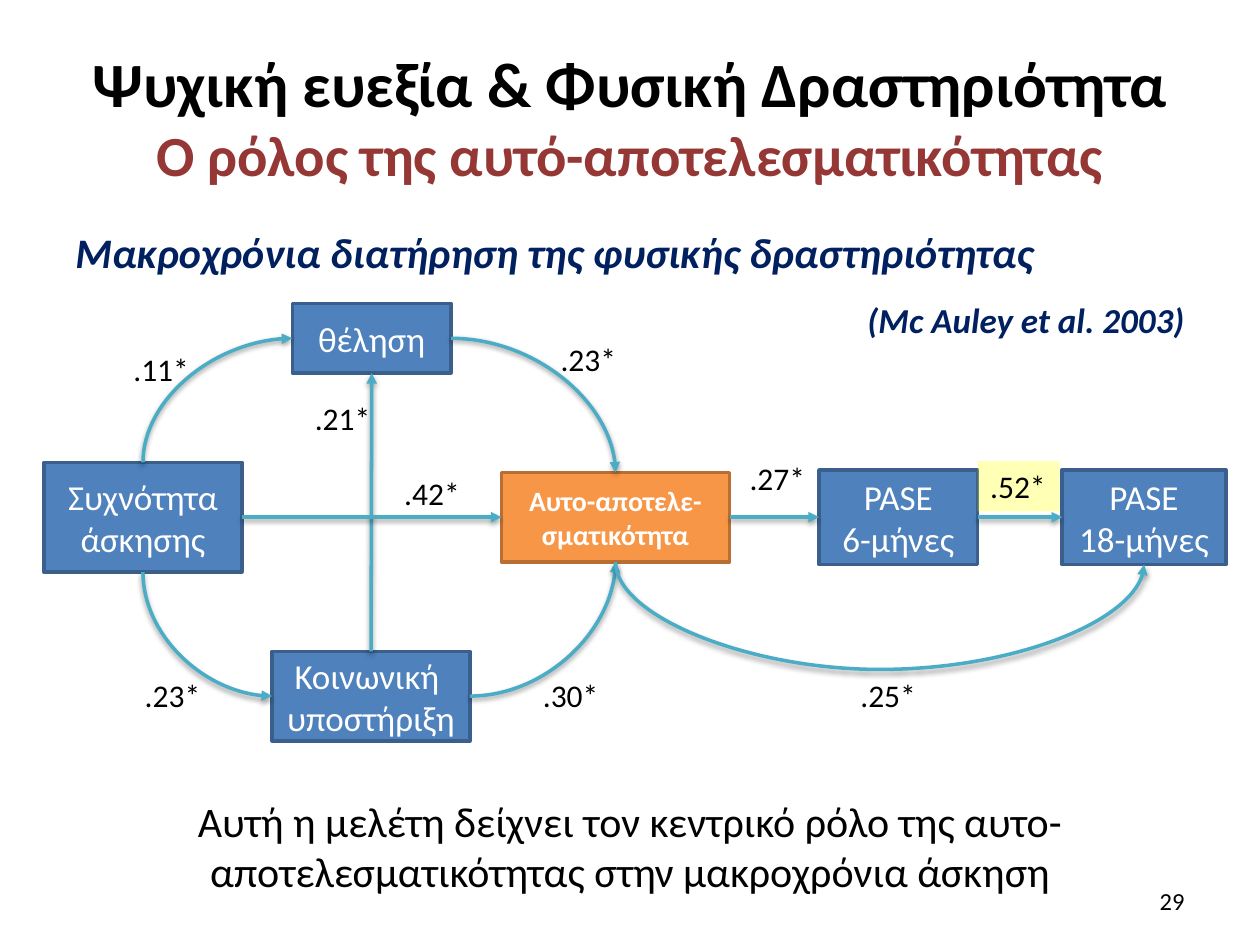
from dataclasses import dataclass

from lxml import etree
from pptx import Presentation
from pptx.dml.color import RGBColor
from pptx.enum.shapes import MSO_CONNECTOR, MSO_SHAPE
from pptx.enum.text import MSO_ANCHOR, MSO_AUTO_SIZE, PP_ALIGN
from pptx.oxml.ns import qn
from pptx.shapes.autoshape import Shape
from pptx.shapes.connector import Connector
from pptx.slide import Slide
from pptx.text.text import TextFrame
from pptx.util import Inches, Pt

RECTANGLE = MSO_SHAPE.RECTANGLE
STRAIGHT, CURVE = MSO_CONNECTOR.STRAIGHT, MSO_CONNECTOR.CURVE
LEFT, CENTER, RIGHT = PP_ALIGN.LEFT, PP_ALIGN.CENTER, PP_ALIGN.RIGHT
MIDDLE = MSO_ANCHOR.MIDDLE
NO_FIT, GROW = MSO_AUTO_SIZE.NONE, MSO_AUTO_SIZE.SHAPE_TO_FIT_TEXT
TOP_SIDE, LEFT_SIDE, BOTTOM_SIDE, RIGHT_SIDE = range(4)

BLACK = RGBColor(0x00, 0x00, 0x00)
WHITE = RGBColor(0xFF, 0xFF, 0xFF)
NAVY = RGBColor(0x00, 0x20, 0x60)
DARK_RED = RGBColor(0x95, 0x37, 0x35)
BLUE = RGBColor(0x4F, 0x81, 0xBD)
BLUE_EDGE = RGBColor(0x3A, 0x5F, 0x8C)
ORANGE = RGBColor(0xF7, 0x96, 0x46)
ORANGE_EDGE = RGBColor(0xB7, 0x6F, 0x34)
TEAL = RGBColor(0x4B, 0xAC, 0xC6)
YELLOW = RGBColor(0xFF, 0xFF, 0x00)
FONT = "Calibri"


@dataclass(frozen=True)
class Node:
    key: str
    lines: tuple[str, ...]
    left: float
    top: float
    width: float
    height: float
    fill: RGBColor = BLUE
    edge: RGBColor = BLUE_EDGE
    size: float = 20
    bold: bool = False


@dataclass(frozen=True)
class Arrow:
    source: str
    source_side: int
    target: str
    target_side: int
    curved: bool = False
    bulge: float = 0


@dataclass(frozen=True)
class Label:
    text: str
    left: float
    top: float
    highlighted: bool = False


NODES = (
    Node("frequency", ("Συχνότητα", "άσκησης"), 0.35, 3.67, 1.57, 0.87),
    Node("will", ("θέληση",), 2.32, 2.41, 1.26, 0.55),
    Node("support", ("Κοινωνική ", "υποστήριξη"), 2.16, 5.17, 1.57, 0.71),
    Node("efficacy", ("Αυτο-αποτελε-", "σματικότητα"), 3.98, 3.75, 1.81, 0.71,
         ORANGE, ORANGE_EDGE, 16, True),
    Node("six_months", ("PASE", "6-μήνες"), 6.5, 3.73, 1.26, 0.75),
    Node("eighteen_months", ("PASE", "18-μήνες"), 8.43, 3.73, 1.3, 0.75),
)

ARROWS = (
    Arrow("support", TOP_SIDE, "will", BOTTOM_SIDE),
    Arrow("frequency", RIGHT_SIDE, "efficacy", LEFT_SIDE),
    Arrow("efficacy", RIGHT_SIDE, "six_months", LEFT_SIDE),
    Arrow("six_months", RIGHT_SIDE, "eighteen_months", LEFT_SIDE),
    Arrow("frequency", TOP_SIDE, "will", LEFT_SIDE, True),
    Arrow("will", RIGHT_SIDE, "efficacy", TOP_SIDE, True),
    Arrow("frequency", BOTTOM_SIDE, "support", LEFT_SIDE, True),
    Arrow("support", RIGHT_SIDE, "efficacy", BOTTOM_SIDE, True),
    Arrow("efficacy", BOTTOM_SIDE, "eighteen_months", BOTTOM_SIDE, True, 0.85),
)

LABELS = (
    Label(".11*", 0.96, 2.73),
    Label(".23*", 1.05, 5.32),
    Label(".42*", 3.11, 3.71),
    Label(".21*", 2.4, 3.12),
    Label(".30*", 4.21, 5.32),
    Label(".25*", 6.73, 5.32),
    Label(".27*", 5.85, 3.59),
    Label(".52*", 7.76, 3.66, True),
    Label(".23*", 4.35, 2.65),
)


def write(frame: TextFrame, text: str, *, size: float, color: RGBColor = BLACK,
          bold: bool = False, italic: bool = False, align: PP_ALIGN = LEFT,
          space_before: float = 0, same_paragraph: bool = False) -> None:
    para = frame.paragraphs[-1]
    if same_paragraph:
        para.add_line_break()
    elif para.runs:
        para = frame.add_paragraph()
    para.alignment = align
    para.space_before = Pt(space_before)
    span = para.add_run()
    span.text = text
    font = span.font
    font.name, font.size = FONT, Pt(size)
    font.bold, font.italic = bold, italic
    font.color.rgb = color


def add_text_box(page: Slide, left: float, top: float, width: float, height: float,
                 wrap: bool = True) -> Shape:
    box = page.shapes.add_textbox(Inches(left), Inches(top), Inches(width), Inches(height))
    box.text_frame.word_wrap = wrap
    return box


def add_node(page: Slide, node: Node) -> Shape:
    box = page.shapes.add_shape(RECTANGLE, Inches(node.left), Inches(node.top),
                                Inches(node.width), Inches(node.height))
    box.shadow.inherit = False
    box.fill.solid()
    box.fill.fore_color.rgb = node.fill
    box.line.color.rgb = node.edge
    box.line.width = Pt(2)
    frame = box.text_frame
    frame.word_wrap = False
    frame.vertical_anchor = MIDDLE
    for line in node.lines:
        write(frame, line, size=node.size, color=WHITE, bold=node.bold, align=CENTER)
    return box


def bend(connector: Connector, arrow: Arrow) -> None:
    across = connector.end_x - connector.begin_x
    down = connector.end_y - connector.begin_y
    middle_x = (connector.begin_x + connector.end_x) // 2
    middle_y = (connector.begin_y + connector.end_y) // 2
    starts_vertical = arrow.source_side in (TOP_SIDE, BOTTOM_SIDE)
    width, height = abs(across), abs(down)
    if starts_vertical:
        width, height = height, width
    properties = connector._element.spPr
    frame = properties.xfrm
    frame.rot = 270.0 if starts_vertical else 0.0
    frame.flipH = starts_vertical and down > 0
    frame.flipV = not starts_vertical and down < 0
    connector.left, connector.top = middle_x - width // 2, middle_y - height // 2
    connector.width, connector.height = width, height
    geometry = properties.find(qn("a:prstGeom"))
    if arrow.bulge:
        guides = geometry.find(qn("a:avLst"))
        if guides is None:
            guides = etree.SubElement(geometry, qn("a:avLst"))
        ratio = round(Inches(arrow.bulge) / width * 100000)
        etree.SubElement(guides, qn("a:gd"), name="adj1", fmla=f"val {ratio}")
    else:
        geometry.set("prst", "curvedConnector2")


def add_arrow(page: Slide, arrow: Arrow, boxes: dict[str, Shape]) -> None:
    connector = page.shapes.add_connector(CURVE if arrow.curved else STRAIGHT, 0, 0, 0, 0)
    connector.begin_connect(boxes[arrow.source], arrow.source_side)
    connector.end_connect(boxes[arrow.target], arrow.target_side)
    if arrow.curved:
        bend(connector, arrow)
    connector.line.color.rgb = TEAL
    connector.line.width = Pt(2)
    properties = connector._element.spPr
    etree.SubElement(properties.find(qn("a:ln")), qn("a:tailEnd"), type="triangle")
    effects = etree.SubElement(properties, qn("a:effectLst"))
    shadow = etree.SubElement(effects, qn("a:outerShdw"), blurRad=str(Pt(3.1)),
                              dist=str(Pt(1.6)), dir="5400000", rotWithShape="0")
    shade = etree.SubElement(shadow, qn("a:srgbClr"), val=str(BLACK))
    etree.SubElement(shade, qn("a:alpha"), val="38000")


def add_label(page: Slide, label: Label) -> None:
    box = add_text_box(page, label.left, label.top, 0.65, 0.4, wrap=False)
    box.text_frame.auto_size = GROW
    write(box.text_frame, label.text, size=18)
    if label.highlighted:
        box.fill.solid()
        box.fill.fore_color.rgb = YELLOW
        color = box._element.spPr.find(qn("a:solidFill")).find(qn("a:srgbClr"))
        etree.SubElement(color, qn("a:alpha"), val="29000")


def main() -> None:
    deck = Presentation()
    deck.slide_width, deck.slide_height = Inches(10), Inches(7.5)
    page = deck.slides.add_slide(deck.slide_layouts[5])

    title = page.shapes.title
    title.left, title.top = Inches(0.5), Inches(0.3)
    title.width, title.height = Inches(9), Inches(1.25)
    heading = title.text_frame
    heading.auto_size = NO_FIT
    heading.vertical_anchor = MIDDLE
    write(heading, "Ψυχική ευεξία & Φυσική Δραστηριότητα", size=36, bold=True, align=CENTER)
    write(heading, "Ο ρόλος της αυτό-αποτελεσματικότητας", size=32.4, color=DARK_RED,
          bold=True, align=CENTER, same_paragraph=True)

    body = add_text_box(page, 0.5, 1.75, 9, 5.15).text_frame
    write(body, "Μακροχρόνια διατήρηση της φυσικής δραστηριότητας", size=24, color=NAVY,
          bold=True, italic=True)
    write(body, "(Mc Auley et al. 2003)", size=20, color=NAVY, bold=True, italic=True,
          align=RIGHT, space_before=12)
    write(body, "Αυτή η μελέτη δείχνει τον κεντρικό ρόλο της αυτο-αποτελεσματικότητας "
          "στην μακροχρόνια άσκηση", size=24, align=CENTER, space_before=260)

    number = add_text_box(page, 7.17, 6.95, 2.33, 0.4).text_frame
    number.vertical_anchor = MIDDLE
    write(number, "29", size=14, align=RIGHT)

    boxes = {node.key: add_node(page, node) for node in NODES}
    for arrow in ARROWS:
        add_arrow(page, arrow, boxes)
    for label in LABELS:
        add_label(page, label)

    deck.save("out.pptx")


if __name__ == "__main__":
    main()
